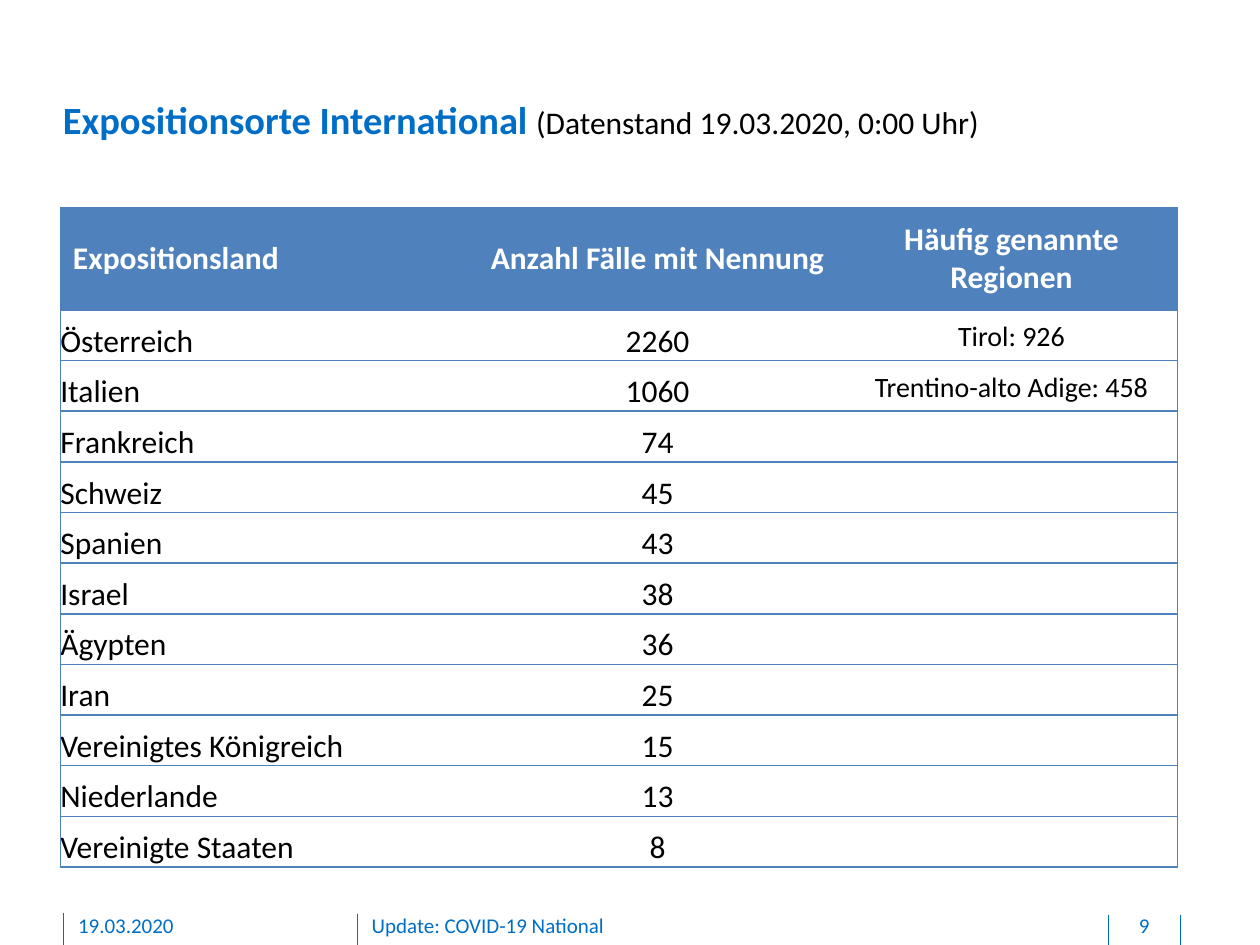
import pptx
import pptx.util
import pptx.dml.color
import pptx.enum.shapes
import pptx.enum.text
import pptx.oxml
import pptx.oxml.ns
import lxml.etree

Pt = pptx.util.Pt
RGB = pptx.dml.color.RGBColor
ALIGN = pptx.enum.text.PP_ALIGN
ANCHOR = pptx.enum.text.MSO_ANCHOR
qn = pptx.oxml.ns.qn

BLUE = RGB(0x00, 0x6E, 0xC7)
STEEL = RGB(0x4F, 0x81, 0xBD)
WHITE = RGB(0xFF, 0xFF, 0xFF)
BLACK = RGB(0x00, 0x00, 0x00)


def add_run(para, text, size, color, bold=False):
    run = para.add_run()
    run.text = text
    run.font.name = "Calibri"
    run.font.size = Pt(size)
    run.font.bold = bold
    run.font.color.rgb = color


def add_box(left, top, width, height, runs, align=ALIGN.LEFT, base=0):
    box = slide.shapes.add_textbox(Pt(left), Pt(top), Pt(width), Pt(height))
    frame = box.text_frame
    frame.word_wrap = True
    frame.margin_left = frame.margin_right = frame.margin_top = 0
    frame.margin_bottom = Pt(base)
    para = frame.paragraphs[0]
    para.alignment = align
    for run in runs:
        add_run(para, *run)


deck = pptx.Presentation()
deck.slide_width, deck.slide_height = Pt(720), Pt(540)
slide = deck.slides.add_slide(deck.slide_layouts[6])

# Footer rules
for left, top in [(204.5, 522), (36, 521.5), (674.6, 522.7), (633.6, 522.7)]:
    rule = slide.shapes.add_connector(
        pptx.enum.shapes.MSO_CONNECTOR.STRAIGHT, Pt(left), Pt(top), Pt(left), Pt(540))
    rule.line.color.rgb = BLUE
    rule.line.width = Pt(0.5)
    lxml.etree.SubElement(rule.element.spPr, qn("a:effectLst"))

# Title
add_box(36, 54.7, 637, 26.6, [
    ("Expositionsorte International ", 22, BLUE, True),
    ("(Datenstand 19.03.2020, 0:00 Uhr)", 18, BLACK)])

# Footer texts
for left, width, text, align in [
        (44.6, 146, "19.03.2020", ALIGN.LEFT),
        (212.4, 408, "Update: COVID-19 National", ALIGN.LEFT),
        (634.3, 39, "9", ALIGN.CENTER)]:
    add_box(left, 521.3, width, 15, [(text, 12, BLUE)], align, 3.6)

# Table data
rows = [
    ("Expositionsland", "Anzahl Fälle mit Nennung", "Häufig genannte Regionen"),
    ("Österreich", "2260", "Tirol: 926"),
    ("Italien", "1060", "Trentino-alto Adige: 458"),
    ("Frankreich", "74", ""),
    ("Schweiz", "45", ""),
    ("Spanien", "43", ""),
    ("Israel", "38", ""),
    ("Ägypten", "36", ""),
    ("Iran", "25", ""),
    ("Vereinigtes Königreich", "15", ""),
    ("Niederlande", "13", ""),
    ("Vereinigte Staaten", "8", ""),
]
widths = [234, 214.5, 190]
head, step = 58.3, 28.95

# Table grid
table = slide.shapes.add_table(
    len(rows), len(widths), Pt(34.5), Pt(118.8),
    Pt(sum(widths)), Pt(head + step * (len(rows) - 1))).table
table.first_row = table.horz_banding = False
for col, width in zip(table.columns, widths):
    col.width = Pt(width)

# Table cells: outer frame and row rules, no inner verticals
for r, row in enumerate(rows):
    table.rows[r].height = Pt(step if r else head)
    for c, text in enumerate(row):
        cell = table.cell(r, c)
        cell.fill.solid()
        cell.fill.fore_color.rgb = WHITE if r else STEEL
        cell.vertical_anchor = ANCHOR.BOTTOM if r else ANCHOR.MIDDLE
        if r and c < 2:
            cell.margin_left = cell.margin_right = 0
            cell.margin_top = cell.margin_bottom = 0
        para = cell.text_frame.paragraphs[0]
        para.alignment = ALIGN.CENTER if c else ALIGN.LEFT
        if text:
            add_run(para, text, 16 if r and c == 2 else 18,
                    BLACK if r else WHITE, r == 0)
        props = cell._tc.get_or_add_tcPr()
        sides = [("L", c == 0), ("R", c == 2), ("T", True), ("B", True)]
        for i, (side, shown) in enumerate(sides):
            edge = lxml.etree.Element(qn("a:ln" + side), w=str(Pt(1)))
            if shown:
                fill = lxml.etree.SubElement(edge, qn("a:solidFill"))
                lxml.etree.SubElement(fill, qn("a:srgbClr"), val=str(STEEL))
            else:
                lxml.etree.SubElement(edge, qn("a:noFill"))
            props.insert(i, edge)

deck.save("out.pptx")
